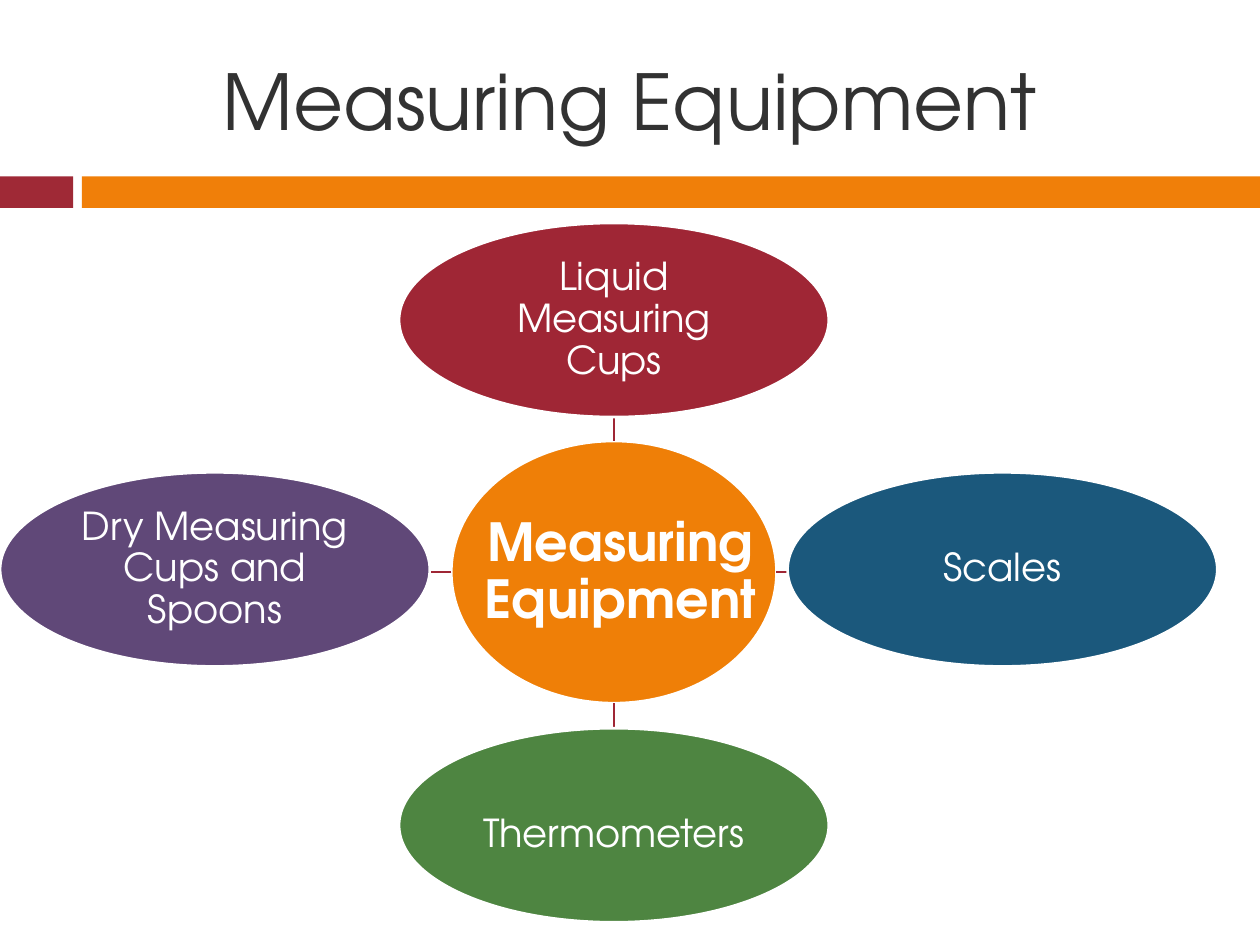
from dataclasses import dataclass

from lxml import etree
from pptx import Presentation
from pptx.dml.color import RGBColor
from pptx.enum.shapes import MSO_CONNECTOR as CONN, MSO_SHAPE as SHAPE
from pptx.enum.text import MSO_ANCHOR as ANCHOR, PP_ALIGN as ALIGN
from pptx.oxml.ns import qn
from pptx.util import Pt


@dataclass(frozen=True)
class Theme:
    """Colours, font and type sizes of the slide."""
    font: str = "TeX Gyre Adventor"
    title_size: float = 44
    hub_size: float = 30
    node_size: float = 22
    line_width: float = 1.5
    ink: str = "323232"
    white: str = "FFFFFF"
    red: str = "9F2936"
    orange: str = "F07F09"
    hub: str = "EF7F07"
    crimson: str = "9F2635"
    blue: str = "1B587C"
    green: str = "4E8541"
    purple: str = "604878"


class SlideBuilder:
    """Draws styled elements on the current slide."""

    def __init__(self, s, theme):
        self.s = s
        self.theme = theme

    def set_text(self, sp, text, size, color, bold=False, spacing=None):
        """Fill a shape with one centred paragraph."""
        tf = sp.text_frame
        tf.text = text
        tf.word_wrap = True
        tf.vertical_anchor = ANCHOR.MIDDLE
        p = tf.paragraphs[0]
        p.alignment = ALIGN.CENTER
        p.line_spacing = spacing
        p.font.name = self.theme.font
        p.font.size = Pt(size)
        p.font.bold = bold
        p.font.color.rgb = RGBColor.from_string(color)
        return tf

    def title(self, text, x, y, w, h):
        """Place and format the title placeholder."""
        sp = self.s.shapes.title
        sp.left, sp.top, sp.width, sp.height = Pt(x), Pt(y), Pt(w), Pt(h)
        self.set_text(sp, text, self.theme.title_size, self.theme.ink)

    def shape(self, kind, x, y, w, h, fill, line=None):
        """Add a flat filled preset shape."""
        sp = self.s.shapes.add_shape(kind, Pt(x), Pt(y), Pt(w), Pt(h))
        sp.shadow.inherit = False
        sp.fill.solid()
        sp.fill.fore_color.rgb = RGBColor.from_string(fill)
        if line:
            sp.line.color.rgb = RGBColor.from_string(line)
            sp.line.width = Pt(self.theme.line_width)
        else:
            sp.line.fill.background()

    def ellipse(self, cx, cy, w, h, fill):
        """Add a white-edged ellipse around a centre."""
        self.shape(SHAPE.OVAL, cx - w / 2, cy - h / 2, w, h, fill, self.theme.white)

    def label(self, text, cx, cy, w, h, size, bold=False):
        """Add a white text box around a centre."""
        sp = self.s.shapes.add_textbox(Pt(cx - w / 2), Pt(cy - h / 2), Pt(w), Pt(h))
        tf = self.set_text(sp, text, size, self.theme.white, bold, 0.9)
        tf.margin_left = tf.margin_right = tf.margin_top = tf.margin_bottom = Pt(1.4)

    def spoke(self, x1, y1, x2, y2):
        """Add a plain straight connector."""
        c = self.s.shapes.add_connector(CONN.STRAIGHT, Pt(x1), Pt(y1), Pt(x2), Pt(y2))
        c.line.color.rgb = RGBColor.from_string(self.theme.crimson)
        c.line.width = Pt(self.theme.line_width)
        etree.SubElement(c._element.spPr, qn("a:effectLst"))


def main():
    """Build the slide and save it."""
    prs = Presentation()
    prs.slide_width, prs.slide_height = Pt(720), Pt(540)
    theme = Theme()
    b = SlideBuilder(prs.slides.add_slide(prs.slide_layouts[5]), theme)

    b.shape(SHAPE.RECTANGLE, 0, 100.8, 41.8, 18, theme.red)
    b.shape(SHAPE.RECTANGLE, 46.8, 100.8, 673.2, 18, theme.orange)
    b.title("Measuring Equipment", 0, 18, 720, 77.8)

    hub_x, hub_y, hub_w, hub_h = 350.8, 326.9, 185.8, 149.8
    node_w, node_h = 245.5, 110.9
    label_w, label_h = 173.5, 78.5
    b.ellipse(hub_x, hub_y, hub_w, hub_h, theme.hub)
    b.label("Measuring Equipment", hub_x + 3.8, hub_y + 0.4, 166.3, 105.8,
            theme.hub_size, bold=True)

    nodes = [
        ("Liquid Measuring Cups", hub_x, 182.9, 0, -1, 0, theme.crimson),
        ("Scales", 572.8, 325.4, 1, 0, 0, theme.blue),
        ("Thermometers", hub_x, 471.6, 0, 1, 5.4, theme.green),
        ("Dry Measuring Cups and Spoons", 122.8, 325.4, -1, 0, 0, theme.purple),
    ]
    for text, cx, cy, dx, dy, drop, fill in nodes:
        end_x = cx - dx * node_w / 2
        end_y = cy - dy * node_h / 2 if dy else hub_y
        b.spoke(hub_x + dx * hub_w / 2, hub_y + dy * hub_h / 2, end_x, end_y)
        b.ellipse(cx, cy, node_w, node_h, fill)
        b.label(text, cx, cy + drop, label_w, label_h, theme.node_size)

    prs.save("out.pptx")


if __name__ == "__main__":
    main()
